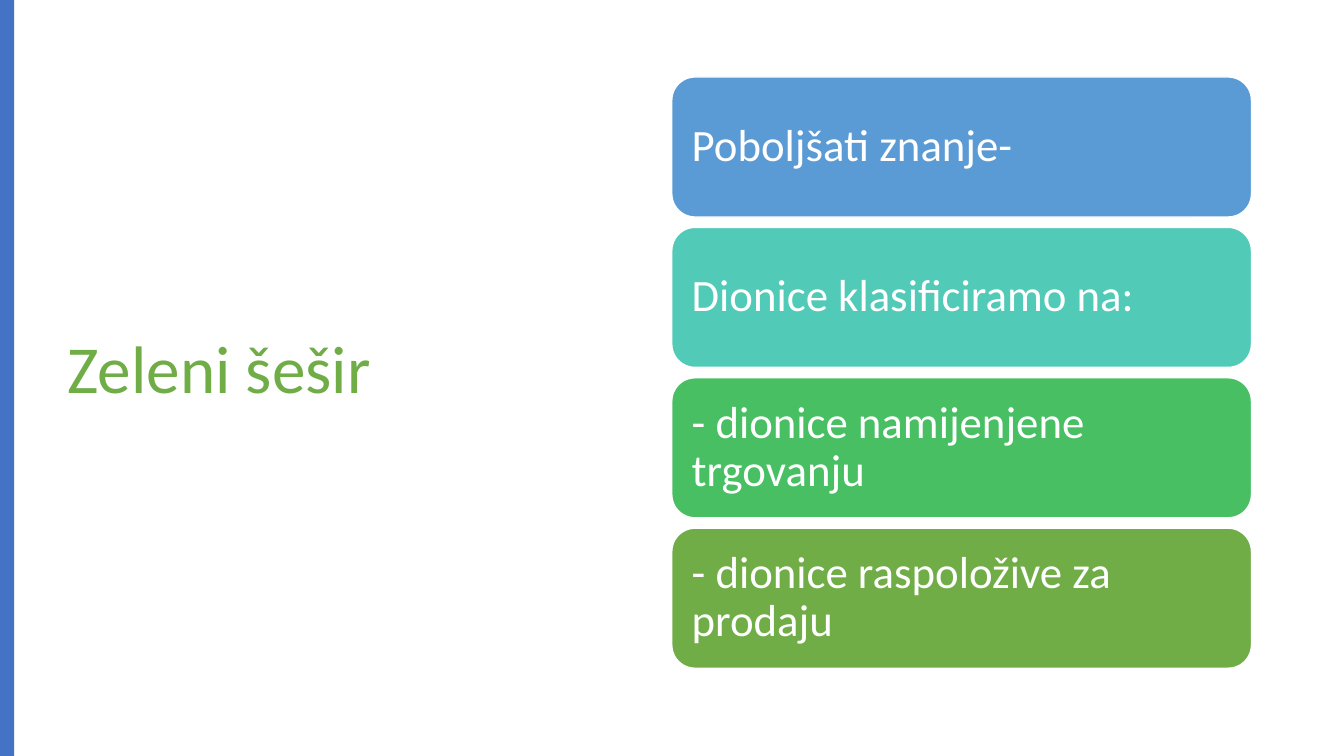
from dataclasses import dataclass

from pptx import Presentation
from pptx.dml.color import RGBColor
from pptx.enum.shapes import MSO_SHAPE
from pptx.enum.text import MSO_ANCHOR, PP_ALIGN
from pptx.shapes.autoshape import Shape
from pptx.slide import Slide
from pptx.util import Cm, Pt

COLORS = {
    "white": "FFFFFF",
    "accent": "4472C4",
    "blue": "5B9BD5",
    "teal": "52CAB8",
    "emerald": "49BF64",
    "green": "70AD47",
}
SLIDE_WIDTH, SLIDE_HEIGHT = 33.87, 19.05
CARD_LEFT, CARD_TOP = 16.93, 1.94
CARD_WIDTH, CARD_HEIGHT, CARD_PITCH = 14.61, 3.53, 3.79


@dataclass(frozen=True)
class Card:
    text: str
    color: str


CARDS = [
    Card("Poboljšati znanje-", "blue"),
    Card("Dionice klasificiramo na:", "teal"),
    Card("- dionice namijenjene trgovanju", "emerald"),
    Card("- dionice raspoložive za prodaju", "green"),
]


def rgb(name: str) -> RGBColor:
    return RGBColor.from_string(COLORS[name])


def write(shape: Shape, text: str, *, size: float, color: str, inset: float) -> None:
    frame = shape.text_frame
    frame.word_wrap = True
    frame.vertical_anchor = MSO_ANCHOR.MIDDLE
    frame.margin_left = frame.margin_right = Cm(inset)
    frame.margin_top = frame.margin_bottom = Cm(inset)
    paragraph = frame.paragraphs[0]
    paragraph.alignment = PP_ALIGN.LEFT
    paragraph.line_spacing = 0.9
    run = paragraph.add_run()
    run.text = text
    run.font.name = "Calibri"
    run.font.size = Pt(size)
    run.font.color.rgb = rgb(color)


def add_block(slide: Slide, kind: MSO_SHAPE, left: float, top: float,
              width: float, height: float, color: str) -> Shape:
    block = slide.shapes.add_shape(kind, Cm(left), Cm(top), Cm(width), Cm(height))
    block.shadow.inherit = False
    block.fill.solid()
    block.fill.fore_color.rgb = rgb(color)
    block.line.fill.background()
    return block


def add_card(slide: Slide, card: Card, row: int) -> None:
    block = add_block(slide, MSO_SHAPE.ROUNDED_RECTANGLE, CARD_LEFT,
                      CARD_TOP + row * CARD_PITCH, CARD_WIDTH, CARD_HEIGHT, card.color)
    block.line.color.rgb = rgb("white")
    block.line.width = Pt(1)
    write(block, card.text, size=32, color="white", inset=0.33)


def main() -> None:
    presentation = Presentation()
    presentation.slide_width = Cm(SLIDE_WIDTH)
    presentation.slide_height = Cm(SLIDE_HEIGHT)
    slide = presentation.slides.add_slide(presentation.slide_layouts[6])

    # Title
    title = slide.shapes.add_textbox(Cm(1.45), Cm(1.73), Cm(14.4), Cm(15.29))
    write(title, "Zeleni šešir", size=48, color="green", inset=0.25)

    # Accent bar along the left edge
    add_block(slide, MSO_SHAPE.RECTANGLE, 0, 0, 0.36, SLIDE_HEIGHT, "accent")

    # Stack of cards
    for row, card in enumerate(CARDS):
        add_card(slide, card, row)

    presentation.save("out.pptx")


if __name__ == "__main__":
    main()
